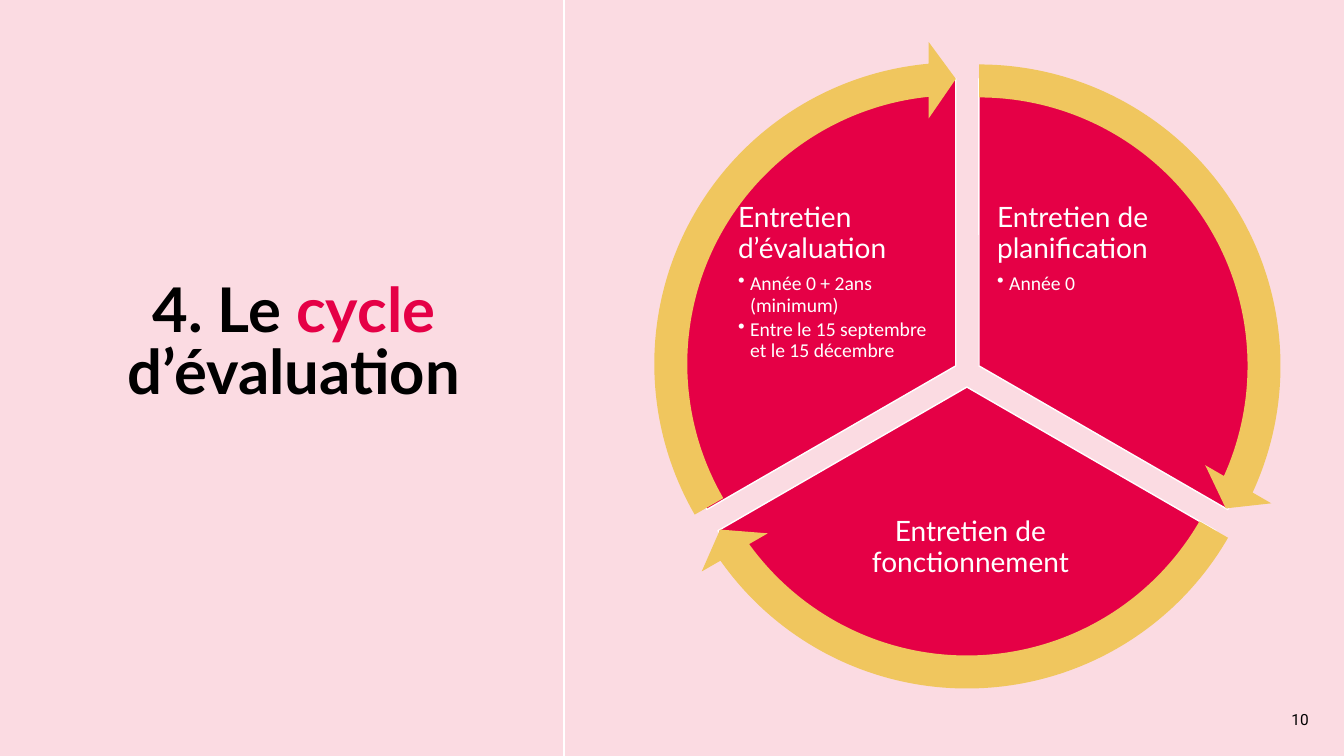
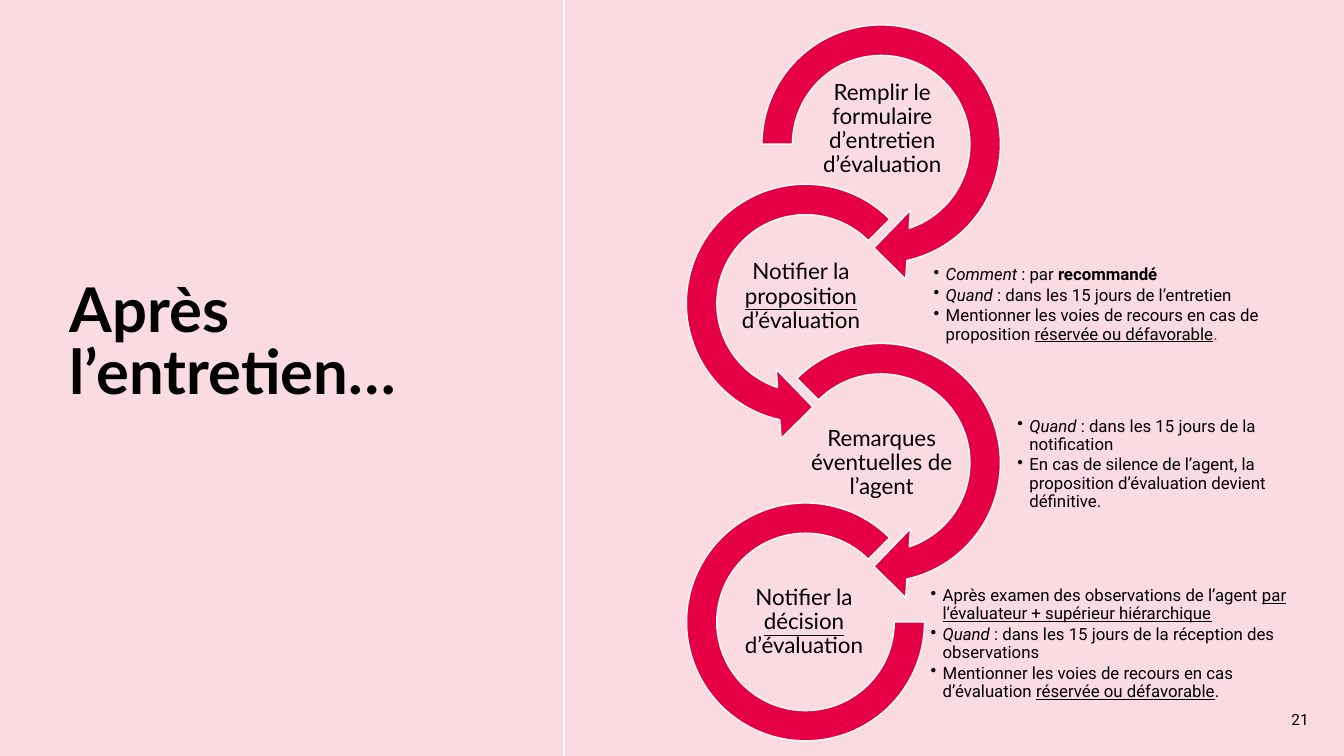
"""Build two slides on the evaluation cycle and its follow-up."""
from lxml.etree import SubElement
from pptx import Presentation
from pptx.dml.color import RGBColor
from pptx.enum.shapes import MSO_CONNECTOR, MSO_SHAPE
from pptx.enum.text import MSO_ANCHOR, PP_ALIGN
from pptx.oxml.ns import qn
from pptx.util import Inches, Pt

PINK = RGBColor(0xFB, 0xDB, 0xE2)
RED = RGBColor(0xE5, 0x00, 0x46)
GOLD = RGBColor(0xF0, 0xC6, 0x5E)
WHITE = RGBColor(0xFF, 0xFF, 0xFF)
BLACK = RGBColor(0, 0, 0)
ALERT = RGBColor(0xFF, 0, 0)

WIDTH, HEIGHT = 13.33, 7.5
DIVIDER_X = 5.59
TITLE_BOX = (0.59, 1.98, 4.65, 2.88)
NUMBER_BOX = (10.08, 6.94, 3, 0.4)
HANG = 0.12

TITLE = {"name": "Lato", "size": 44, "bold": True, "color": BLACK}
NUMBER = {"name": "Roboto", "size": 11, "color": BLACK}
SECTOR = {"name": "Lato", "size": 20, "color": WHITE}
DETAIL = {"name": "Calibri", "size": 14, "color": WHITE}
STEP = {"name": "Lato", "size": 16, "color": BLACK}
NOTE = {"name": "Roboto", "size": 12, "color": BLACK}
BOLD, ITALIC, UNDER = {"bold": True}, {"italic": True}, {"underline": True}

CENTER, LEFT, RIGHT = PP_ALIGN.CENTER, PP_ALIGN.LEFT, PP_ALIGN.RIGHT
TOP, MIDDLE = MSO_ANCHOR.TOP, MSO_ANCHOR.MIDDLE

PIE_SIZE, ARROW_SIZE = 5.7, 6.41
SECTORS = [
    {"center": (9.71, 3.63), "angles": (162, 18), "arrow_end": 14.73, "lift": 0,
     "box": (9.86, 1.99, 2.04, 1.7), "layout": (LEFT, TOP),
     "head": "Entretien de planification", "details": ["Année 0"]},
    {"center": (9.59, 3.84), "angles": (18, 90), "arrow_end": 86.72, "lift": 0,
     "box": (8.1, 4.69, 3.05, 1.49), "layout": (CENTER, MIDDLE),
     "head": "Entretien de fonctionnement", "details": []},
    {"center": (9.48, 3.63), "angles": (90, 162), "arrow_end": 158.73, "lift": 0.02,
     "box": (7.29, 1.99, 2.04, 1.7), "layout": (LEFT, TOP),
     "head": "Entretien d’évaluation",
     "details": ["Année 0 + 2ans (minimum)",
                 "Entre le 15 septembre et le 15 décembre"]},
]

RING_X, RING_Y, RING_STEP = (8.74, 7.99), 1.43, 1.58
RING_SIZE, LOOP_SIZE = 2.75, 2.36
STEPS = [
    {"shape": MSO_SHAPE.CIRCULAR_ARROW, "angles": (45, 108),
     "box": (7.89, 0.8, 1.72, 0.97),
     "label": ["Remplir le formulaire d’entretien d’évaluation"]},
    {"shape": MSO_SHAPE.LEFT_CIRCULAR_ARROW, "angles": (63, 189),
     "box": (7.18, 2.56, 1.53, 0.77),
     "label": ["Notifier la ", ("proposition", UNDER), " d’évaluation"],
     "note_box": (9.25, 2.49, 3.28, 1.07),
     "notes": [
         [("Comment", ITALIC), " : par ", ("recommandé", BOLD)],
         [("Quand", ITALIC), " : dans les 15 jours de l’entretien"],
         ["Mentionner les voies de recours en cas de proposition ",
          ("réservée ou défavorable", UNDER), (".", {"color": ALERT})]]},
    {"shape": MSO_SHAPE.CIRCULAR_ARROW, "angles": (45, 135),
     "box": (7.98, 4.21, 1.53, 0.77),
     "label": ["Remarques éventuelles de l’agent"],
     "note_box": (10.08, 4.05, 2.9, 1.11),
     "notes": [
         [("Quand", ITALIC), " : dans les 15 jours de la notification"],
         ["En cas de silence de l’agent, la proposition d’évaluation "
          "devient définitive."]]},
    {"shape": MSO_SHAPE.BLOCK_ARC, "angles": (0, 189),
     "box": (7.21, 5.79, 1.53, 0.77),
     "label": ["Notifier la ", ("décision", UNDER), " d’évaluation"],
     "note_box": (9.22, 5.74, 3.77, 1.3),
     "notes": [
         ["Après examen des observations de l’agent ",
          ("par l’évaluateur + supérieur hiérarchique", UNDER)],
         [("Quand ", ITALIC),
          ": dans les 15 jours de la réception des observations"],
         ["Mentionner les voies de recours en cas d’évaluation ",
          ("réservée ou défavorable", UNDER), "."]]},
]


def inches(values):
    return [Inches(v) for v in values]


def add_runs(p, runs, style):
    for run in runs:
        text, extra = run if isinstance(run, tuple) else (run, {})
        r = p.add_run()
        r.text = text
        for key, value in {**style, **extra}.items():
            if key == "color":
                r.font.color.rgb = value
            else:
                setattr(r.font, key, Pt(value) if key == "size" else value)


def set_bullet(p):
    pPr = p._p.get_or_add_pPr()
    pPr.set("marL", str(Inches(HANG)))
    pPr.set("indent", str(-Inches(HANG)))
    SubElement(pPr, qn("a:buChar")).set("char", "•")


def add_text(s, box, paragraphs, align=LEFT, anchor=MIDDLE, inset=None, spacing=0.9):
    """Write (runs, style, bulleted) paragraphs into a wrapped text box."""
    tf = s.shapes.add_textbox(*inches(box)).text_frame
    tf.word_wrap, tf.vertical_anchor = True, anchor
    if inset is not None:
        for side in ("left", "top", "right", "bottom"):
            setattr(tf, f"margin_{side}", Inches(inset))
    for i, (runs, style, bulleted) in enumerate(paragraphs):
        p = tf.paragraphs[0] if i == 0 else tf.add_paragraph()
        p.alignment, p.line_spacing = align, spacing
        if inset is not None:
            p.space_after = Pt(round(style["size"] * (0.15 if bulleted else 0.35), 1))
        if bulleted:
            set_bullet(p)
        add_runs(p, runs, style)


def add_round(s, kind, center, size, adjustments, fill, outlined=True):
    x, y = center
    sp = s.shapes.add_shape(kind, *inches((x - size / 2, y - size / 2, size, size)))
    sp.shadow.inherit = False
    for i, value in enumerate(adjustments):
        sp.adjustments[i] = value
    sp.fill.solid()
    sp.fill.fore_color.rgb = fill
    if outlined:
        sp.line.color.rgb, sp.line.width = WHITE, Pt(1)
    else:
        sp.line.fill.background()


def add_slide(prs, title, number, align):
    s = prs.slides.add_slide(prs.slide_layouts[6])
    s.background.fill.solid()
    s.background.fill.fore_color.rgb = PINK
    line = s.shapes.add_connector(
        MSO_CONNECTOR.STRAIGHT, *inches((DIVIDER_X, 0, DIVIDER_X, HEIGHT)))
    line.line.color.rgb, line.line.width = WHITE, Pt(1.5)
    SubElement(line._element.spPr, qn("a:effectLst"))
    add_text(s, TITLE_BOX, [(title, TITLE, False)], align, spacing=Pt(44))
    add_text(s, NUMBER_BOX, [([number], NUMBER, False)], RIGHT, spacing=1.0)
    return s


def draw_cycle(s):
    for sector in SECTORS:
        add_round(s, MSO_SHAPE.PIE, sector["center"], PIE_SIZE, sector["angles"], RED)
        paragraphs = [([sector["head"]], SECTOR, False)]
        paragraphs += [([d], DETAIL, True) for d in sector["details"]]
        add_text(s, sector["box"], paragraphs, *sector["layout"], inset=0.03)
    for sector in SECTORS:
        x, y = sector["center"]
        add_round(s, MSO_SHAPE.CIRCULAR_ARROW, (x, y - sector["lift"]), ARROW_SIZE,
                  (0.051, 3.275, sector["arrow_end"], sector["angles"][0], 0.059),
                  GOLD, outlined=False)


def draw_steps(s):
    for i, step in enumerate(STEPS):
        center = (RING_X[i % 2], RING_Y + i * RING_STEP)
        if step["shape"] == MSO_SHAPE.BLOCK_ARC:
            size, adjustments = LOOP_SIZE, (*step["angles"], 0.127)
        else:
            size, adjustments = RING_SIZE, (0.11, 11.423, *step["angles"], 0.125)
        add_round(s, step["shape"], center, size, adjustments, RED)
        add_text(s, step["box"], [(step["label"], STEP, False)], CENTER, inset=0.01)
        if "notes" in step:
            add_text(s, step["note_box"], [(n, NOTE, True) for n in step["notes"]],
                     inset=0.01)


def main():
    prs = Presentation()
    prs.slide_width, prs.slide_height = inches((WIDTH, HEIGHT))
    draw_cycle(add_slide(
        prs, ["4. Le ", ("cycle", {"color": RED}), " d’évaluation"], "10", CENTER))
    draw_steps(add_slide(prs, ["Après l’entretien…"], "21", LEFT))
    prs.save("out.pptx")


if __name__ == "__main__":
    main()
